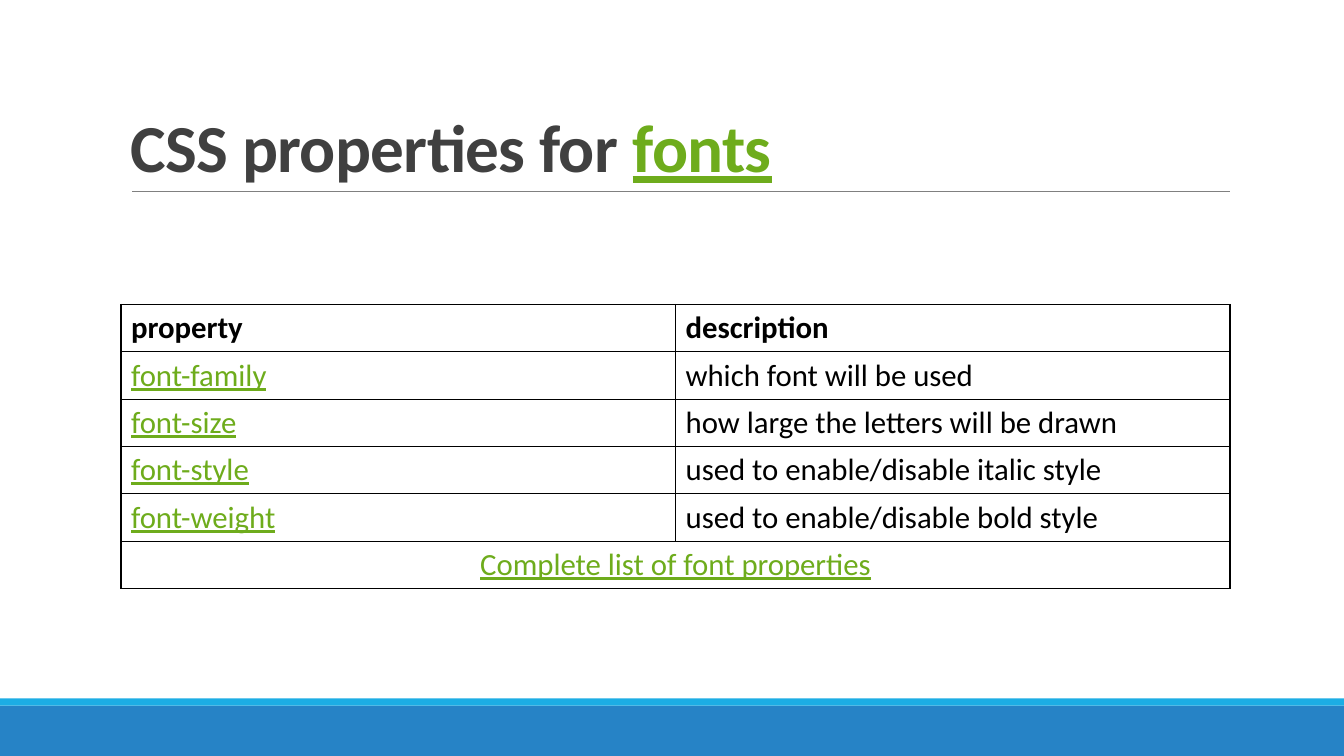
from lxml import etree
from pptx import Presentation
from pptx.dml.color import RGBColor
from pptx.enum.shapes import MSO_CONNECTOR, MSO_SHAPE
from pptx.enum.text import MSO_ANCHOR, PP_ALIGN
from pptx.oxml.ns import qn
from pptx.util import Inches, Pt

LINE, RECT = MSO_CONNECTOR.STRAIGHT, MSO_SHAPE.RECTANGLE
BOTTOM, MIDDLE, CENTER = MSO_ANCHOR.BOTTOM, MSO_ANCHOR.MIDDLE, PP_ALIGN.CENTER
FONT = "Calibri"
COLORS = {"title": "404040", "link": "6EAC1C", "text": "000000", "rule": "808080",
          "band": "2683C6", "strip": "1CADE4", "grid": "000000", "cell": "FFFFFF"}
ROWS = [
    ("property", "description"),
    ("font-family", "which font will be used"),
    ("font-size", "how large the letters will be drawn"),
    ("font-style", "used to enable/disable italic style"),
    ("font-weight", "used to enable/disable bold style"),
    ("Complete list of font properties", ""),
]


def color(name):
    return RGBColor.from_string(COLORS[name])


def style(para, size, bold, name="text"):
    font = para.font
    font.name, font.size, font.bold = FONT, Pt(size), bold
    font.color.rgb = color(name)


def add_run(para, text, link=False):
    run = para.add_run()
    run.text = text
    if link:
        run.font.underline = True
        run.font.color.rgb = color("link")
    return run


def add_bar(slide, x, y, w, h, name):
    bar = slide.shapes.add_shape(RECT, Inches(x), Inches(y), Inches(w), Inches(h))
    bar.shadow.inherit = False
    bar.fill.solid()
    bar.fill.fore_color.rgb = color(name)
    bar.line.fill.background()


def add_footer(slide, x, y, w, h):
    """Draw a wide band with a thin strip along its top."""
    strip = 0.07
    add_bar(slide, x, y + strip, w, h - strip, "band")
    add_bar(slide, x, y, w, strip, "strip")


def add_title(slide, x, y, w, h):
    """Place the heading at the foot of its box, with a rule below."""
    box = slide.shapes.add_textbox(Inches(x), Inches(y), Inches(w), Inches(h))
    frame = box.text_frame
    frame.word_wrap = True
    frame.vertical_anchor = BOTTOM
    para = frame.paragraphs[0]
    para.line_spacing = 0.85
    style(para, 48, True, "title")
    for text, link in (("CSS properties for ", False), ("fonts", True)):
        add_run(para, text, link)._r.get_or_add_rPr().set("spc", "-50")

    base = Inches(y + h)
    rule = slide.shapes.add_connector(LINE, Inches(x + 0.11), base, Inches(x + w), base)
    rule.line.color.rgb = color("rule")
    rule.line.width = Pt(0.5)
    etree.SubElement(rule._element.spPr, qn("a:effectLst"))


def set_cell(cell):
    """Give a cell thin borders on all sides and a plain fill."""
    props = cell._tc.get_or_add_tcPr()
    for side in "LRTB":
        edge = etree.SubElement(props, qn(f"a:ln{side}"), w=str(Pt(1)))
        fill = etree.SubElement(edge, qn("a:solidFill"))
        etree.SubElement(fill, qn("a:srgbClr"), val=COLORS["grid"])
    cell.fill.solid()
    cell.fill.fore_color.rgb = color("cell")
    cell.vertical_anchor = MIDDLE


def add_grid(slide, x, y, w, h):
    last = len(ROWS) - 1
    table = slide.shapes.add_table(len(ROWS), 2, Inches(x), Inches(y),
                                   Inches(w), Inches(h)).table
    table.first_row = table.horz_banding = False
    for r, row in enumerate(ROWS):
        for c, text in enumerate(row):
            cell = table.cell(r, c)
            set_cell(cell)
            para = cell.text_frame.paragraphs[0]
            style(para, 22, r == 0)
            if text:
                add_run(para, text, link=r > 0 and c == 0)
    foot = table.cell(last, 0)
    foot.merge(table.cell(last, 1))
    foot.text_frame.paragraphs[0].alignment = CENTER


def main():
    deck = Presentation()
    deck.slide_width, deck.slide_height = Inches(13.33), Inches(7.5)
    slide = deck.slides.add_slide(deck.slide_layouts[6])
    add_footer(slide, 0, 6.93, 13.33, 0.57)
    add_title(slide, 1.2, 0.31, 11, 1.59)
    add_grid(slide, 1.2, 3.02, 11, 2.82)
    deck.save("out.pptx")


if __name__ == "__main__":
    main()
